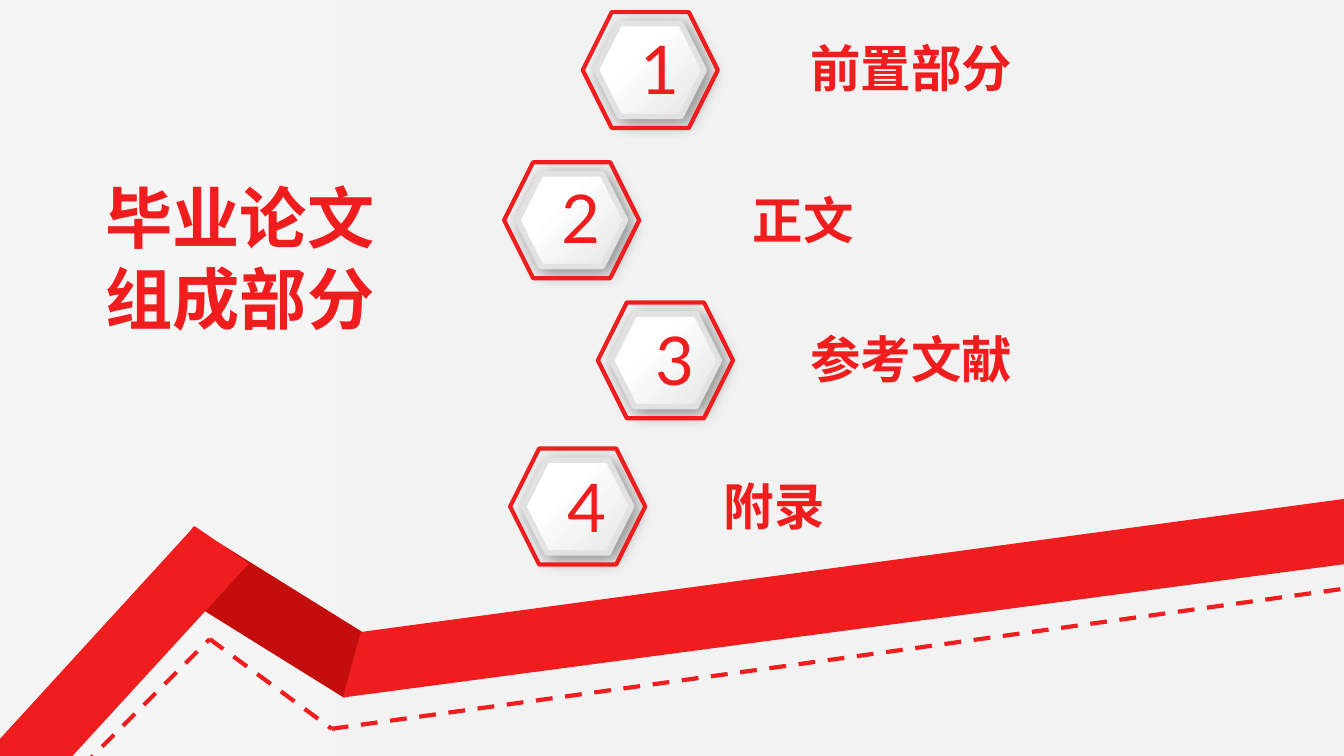
from itertools import pairwise

from lxml import etree
from pptx import Presentation
from pptx.dml.color import RGBColor
from pptx.enum.dml import MSO_LINE
from pptx.enum.shapes import MSO_CONNECTOR, MSO_SHAPE
from pptx.enum.text import MSO_AUTO_SIZE, PP_ALIGN
from pptx.oxml.ns import qn
from pptx.util import Emu, Inches, Pt

RECT, HEX = MSO_SHAPE.RECTANGLE, MSO_SHAPE.HEXAGON
STRAIGHT, DASH = MSO_CONNECTOR.STRAIGHT, MSO_LINE.DASH
LEFT, CENTER = PP_ALIGN.LEFT, PP_ALIGN.CENTER
GROW = MSO_AUTO_SIZE.SHAPE_TO_FIT_TEXT

RED = RGBColor(0xEF, 0x1D, 0x1D)
DARK = RGBColor(0xC4, 0x0E, 0x0E)
RIM = RGBColor(0xE3, 0xE1, 0xE1)
WHITE = RGBColor(0xFF, 0xFF, 0xFF)
SILVER = RGBColor(0xE7, 0xE6, 0xE6)
PALE = RGBColor(0xF5, 0xF5, 0xF5)
MIST = RGBColor(0xF2, 0xF2, 0xF2)

HAN, LATIN = "Noto Sans CJK SC", "Lato"

# The grid has square cells, 7.5 rows to the slide's height
WIDE, HIGH = Inches(13.33), Inches(7.5)
CELL = HIGH / 7.5

# Number, label, badge corner, number corner, label corner
PARTS = [
    ("1", "前置部分", (5.78, 0.12), (6.25, 0.22), (7.94, 0.32)),
    ("2", "正文", (5.00, 1.61), (5.47, 1.70), (7.37, 1.83)),
    ("3", "参考文献", (5.93, 3.00), (6.40, 3.11), (7.94, 3.21)),
    ("4", "附录", (5.06, 4.45), (5.53, 4.57), (7.08, 4.66)),
]
RISE = [(-0.53, 7.91), (1.93, 5.22), (2.47, 5.59), (-0.06, 8.35)]
CLIMB = [(3.58, 6.27), (15.1, 4.71), (15.19, 5.35), (3.4, 6.92)]
TRAIL = [(0.6, 7.82), (2.08, 6.34), (3.29, 7.23), (13.48, 5.82)]


def cells(*nums):
    return [Emu(round(n * CELL)) for n in nums]


def blend(fill, angle, *stops):
    fill.gradient()
    fill.gradient_angle = angle
    for stop, (spot, color) in zip(fill.gradient_stops, stops):
        stop.position = spot
        stop.color.rgb = color


def paint(shape, color):
    shape.shadow.inherit = False
    shape.fill.solid()
    shape.fill.fore_color.rgb = color
    shape.line.fill.background()


def add_text(slide, text, box, size, font, align=LEFT, bold=False):
    frame = slide.shapes.add_textbox(*cells(*box)).text_frame
    frame.word_wrap = True
    frame.auto_size = GROW
    par = frame.paragraphs[0]
    par.text = text
    par.alignment = align
    par.font.size = Pt(size)
    par.font.bold = bold
    par.font.name = font
    par.font.color.rgb = RED
    props = par._p.pPr.find(qn("a:defRPr"))
    etree.SubElement(props, qn("a:ea"), typeface=font)


def add_glow(shape):
    """Soft black shadow, down and to the right."""
    shape.shadow.inherit = False
    effects = shape._element.spPr.find(qn("a:effectLst"))
    glow = etree.SubElement(
        effects, qn("a:outerShdw"), blurRad=str(Pt(13)), dist=str(Pt(4)),
        dir="2700000", algn="tl", rotWithShape="0")
    color = etree.SubElement(glow, qn("a:srgbClr"), val="000000")
    etree.SubElement(color, qn("a:alpha"), val="43000")


def add_badge(slide, left, top):
    group = slide.shapes.add_group_shape().shapes
    core = group.add_shape(HEX, *cells(left + 0.135, top + 0.115, 1.07, 0.92))
    blend(core.fill, 315, (0.34, WHITE), (1, SILVER))
    core.line.color.rgb = RIM
    core.line.width = Pt(4)
    add_glow(core)
    ring = group.add_shape(HEX, *cells(left, top, 1.34, 1.15))
    ring.shadow.inherit = False
    ring.fill.background()
    ring.line.color.rgb = RED
    ring.line.width = Pt(3)


def add_band(slide, points):
    first, *rest = [cells(*point) for point in points]
    maker = slide.shapes.build_freeform(*first)
    maker.add_line_segments(rest, close=True)
    paint(maker.convert_to_shape(), RED)


def add_dash(slide, start, end):
    line = slide.shapes.add_connector(STRAIGHT, *cells(*start, *end))
    line.line.color.rgb = RED
    line.line.width = Pt(3)
    line.line.dash_style = DASH
    etree.SubElement(line._element.spPr, qn("a:effectLst"))


def main():
    deck = Presentation()
    deck.slide_width, deck.slide_height = WIDE, HIGH
    slide = deck.slides.add_slide(deck.slide_layouts[6])
    blend(slide.background.fill, 0, (0, PALE), (0.5, MIST))

    # Folded ribbon
    fold = slide.shapes.add_shape(RECT, *cells(1.58, 5.75, 2.17, 0.65))
    fold.rotation = 31.9
    paint(fold, DARK)
    for band in (RISE, CLIMB):
        add_band(slide, band)

    # Dashed trail under the ribbon
    for start, end in pairwise(TRAIL):
        add_dash(slide, start, end)

    # Title
    add_text(slide, "毕业论文组成部分", (0.86, 1.7, 3.04, 1.72), 48, HAN,
             CENTER, True)

    # Numbered parts
    for num, label, badge, spot, side in PARTS:
        add_badge(slide, *badge)
        add_text(slide, num, (*spot, 0.4, 0.91), 48, LATIN, CENTER)
        add_text(slide, label, (*side, 3.77, 0.71), 36, HAN, bold=True)

    deck.save("out.pptx")


if __name__ == "__main__":
    main()
